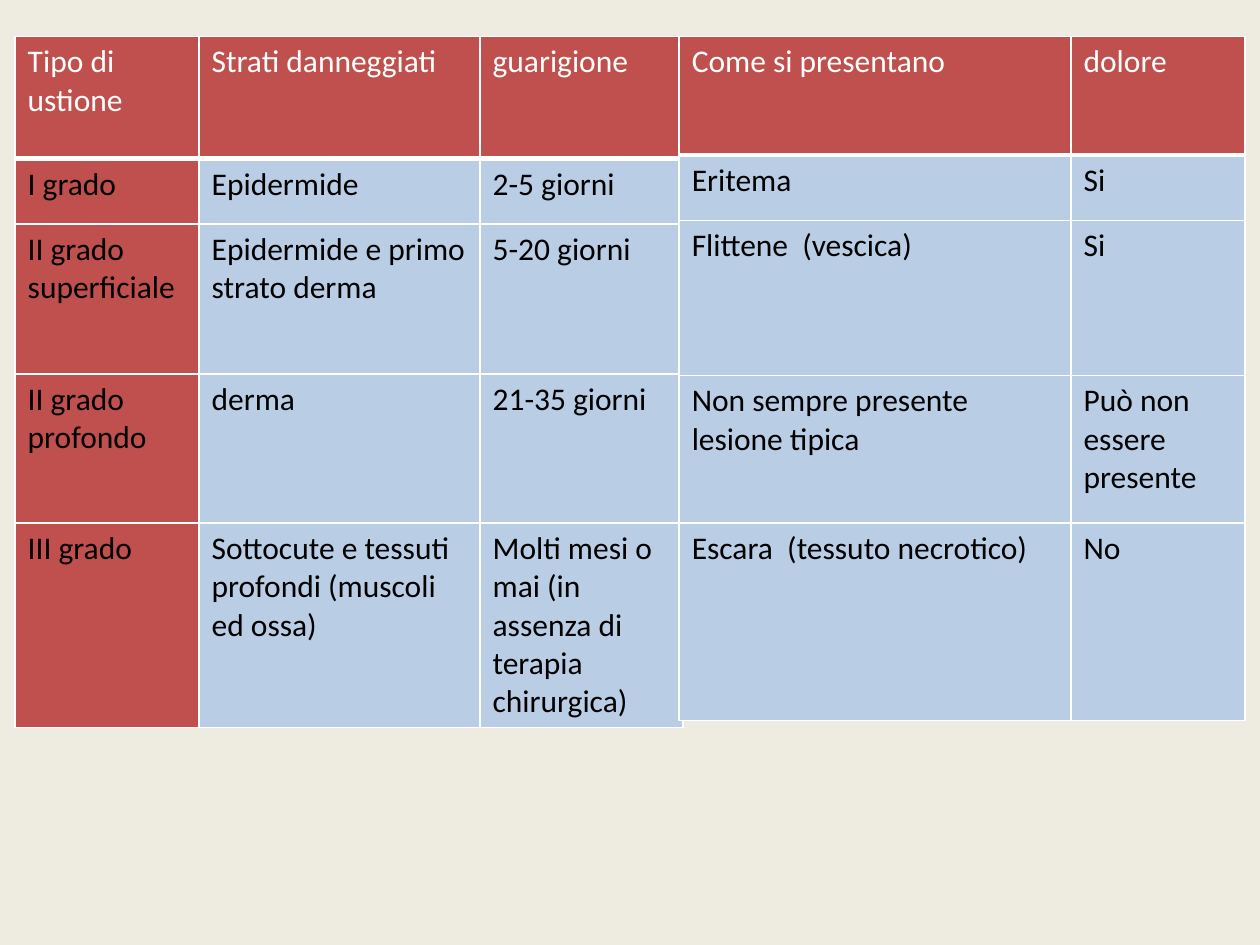
from lxml import etree
from pptx import Presentation
from pptx.dml.color import RGBColor
from pptx.oxml.ns import qn
from pptx.util import Inches, Pt

RED = RGBColor(0xC0, 0x50, 0x4D)
BLUE = RGBColor(0xB9, 0xCD, 0xE5)
CREAM = RGBColor(0xEE, 0xEC, 0xE1)
WHITE = RGBColor(0xFF, 0xFF, 0xFF)
BLACK = RGBColor(0, 0, 0)
TOP = 0.29

TABLES = [
    {
        "left": 0.12,
        "cols": [1.46, 2.23, 1.61],
        "rows": [0.97, 0.52, 1.19, 1.18, 1.57],
        "labels": True,
        "cells": [
            ("Tipo di ustione", "Strati danneggiati", "guarigione"),
            ("I grado", "Epidermide", "2-5 giorni"),
            ("II grado superficiale", "Epidermide e primo strato derma",
             "5-20 giorni"),
            ("II grado profondo", "derma", "21-35 giorni"),
            ("III grado", "Sottocute e tessuti profondi (muscoli ed ossa)",
             "Molti mesi o mai (in assenza di terapia chirurgica)"),
        ],
    },
    {
        "left": 5.39,
        "cols": [3.11, 1.38],
        "rows": [0.94, 0.52, 1.23, 1.17, 1.57],
        "labels": False,
        "cells": [
            ("Come si presentano", "dolore"),
            ("Eritema", "Si"),
            ("Flittene  (vescica)", "Si"),
            ("Non sempre presente lesione tipica", "Può non essere presente"),
            ("Escara  (tessuto necrotico)", "No"),
        ],
    },
]


def set_edges(cell, base):
    """Draw white borders, with the bottom one base points wide."""
    props = cell._tc.get_or_add_tcPr()
    for side, width in (("L", 1), ("R", 1), ("T", 1), ("B", base)):
        line = etree.SubElement(props, qn(f"a:ln{side}"), w=str(Pt(width)))
        fill = etree.SubElement(line, qn("a:solidFill"))
        etree.SubElement(fill, qn("a:srgbClr"), val=str(WHITE))


def fill_cell(cell, words, head, label):
    set_edges(cell, 3 if head else 1)
    cell.fill.solid()
    cell.fill.fore_color.rgb = RED if head or label else BLUE
    run = cell.text_frame.paragraphs[0].add_run()
    run.text = words
    run.font.name = "Calibri"
    run.font.size = Pt(18)
    run.font.bold = False
    run.font.color.rgb = WHITE if head else BLACK


def add_grid(slide, data):
    cols, rows = data["cols"], data["rows"]
    grid = slide.shapes.add_table(
        len(rows), len(cols), Inches(data["left"]), Inches(TOP),
        Inches(sum(cols)), Inches(sum(rows))).table
    for col, width in zip(grid.columns, cols):
        col.width = Inches(width)
    for row, height in zip(grid.rows, rows):
        row.height = Inches(height)
    for r, line in enumerate(data["cells"]):
        for c, words in enumerate(line):
            fill_cell(grid.cell(r, c), words, r == 0,
                      data["labels"] and c == 0)


def main():
    deck = Presentation()
    deck.slide_width, deck.slide_height = Inches(10), Inches(7.5)
    slide = deck.slides.add_slide(deck.slide_layouts[6])
    slide.background.fill.solid()
    slide.background.fill.fore_color.rgb = CREAM
    for data in TABLES:
        add_grid(slide, data)
    deck.save("out.pptx")


if __name__ == "__main__":
    main()
